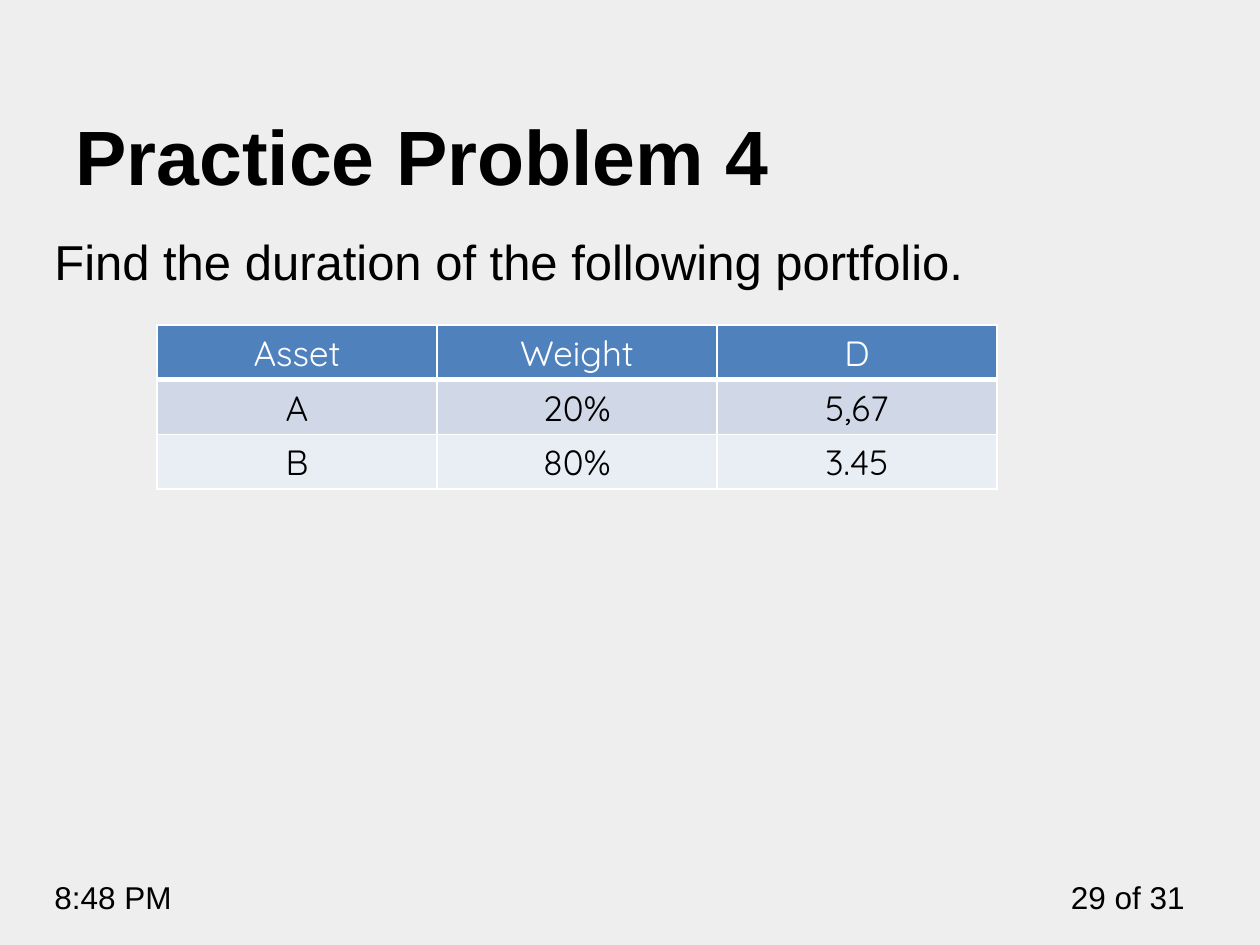
from lxml import etree
from pptx import Presentation
from pptx.dml.color import RGBColor
from pptx.enum.text import MSO_ANCHOR, PP_ALIGN
from pptx.oxml.ns import qn
from pptx.util import Emu, Pt

EMU_PER_PX = 914400 / 126
COLORS = {
    "background": "EEEEEE",
    "text": "000000",
    "white": "FFFFFF",
    "header": "4F81BD",
    "odd_row": "D0D8E8",
    "even_row": "E9EDF4",
}


def px(length):
    return Emu(round(length * EMU_PER_PX))


def write_text(frame, text, size, font="Arial", color="text", bold=False,
               align=PP_ALIGN.LEFT, anchor=MSO_ANCHOR.TOP):
    frame.word_wrap = True
    frame.vertical_anchor = anchor
    paragraph = frame.paragraphs[0]
    paragraph.alignment = align
    run = paragraph.add_run()
    run.text = text
    run.font.name = font
    run.font.size = Pt(size)
    run.font.bold = bold
    run.font.color.rgb = RGBColor.from_string(COLORS[color])


presentation = Presentation()
presentation.slide_width = px(1260)
presentation.slide_height = px(945)
slide = presentation.slides.add_slide(presentation.slide_layouts[6])
slide.background.fill.solid()
slide.background.fill.fore_color.rgb = RGBColor.from_string(COLORS["background"])

# Footer, body and title
page_number = slide.shapes.add_textbox(px(1050), px(872), px(147), px(50))
write_text(page_number.text_frame, "29 of 31", 18, align=PP_ALIGN.RIGHT)

clock = slide.shapes.add_textbox(px(42), px(872), px(199), px(50))
write_text(clock.text_frame, "8:48 PM", 18)

body = slide.shapes.add_textbox(px(42), px(220), px(1166), px(640))
body.text_frame.margin_top = px(12)
write_text(body.text_frame, "Find the duration of the following portfolio.", 28)

title = slide.shapes.add_textbox(px(63), px(49), px(1134), px(158))
write_text(title.text_frame, "Practice Problem 4", 44, bold=True,
           anchor=MSO_ANCHOR.BOTTOM)

# Portfolio table
portfolio = [
    ("Asset", "Weight", "D"),
    ("A", "20%", "5,67"),
    ("B", "80%", "3.45"),
]
row_fills = ["header", "odd_row", "even_row"]
table = slide.shapes.add_table(3, 3, px(157), px(325), px(840), px(156)).table

for row_index, (values, fill) in enumerate(zip(portfolio, row_fills)):
    for column_index, value in enumerate(values):
        cell = table.cell(row_index, column_index)
        is_header = row_index == 0
        write_text(cell.text_frame, value, 20, font="Quicksand",
                   color="white" if is_header else "text",
                   align=PP_ALIGN.CENTER)
        properties = cell._tc.get_or_add_tcPr()
        for side in ("lnL", "lnR", "lnT", "lnB"):
            below_header = (row_index, side) in ((0, "lnB"), (1, "lnT"))
            border = etree.SubElement(properties, qn(f"a:{side}"),
                                      w=str(Pt(3 if below_header else 1)))
            line_fill = etree.SubElement(border, qn("a:solidFill"))
            etree.SubElement(line_fill, qn("a:srgbClr"), val=COLORS["white"])
        cell.fill.solid()
        cell.fill.fore_color.rgb = RGBColor.from_string(COLORS[fill])

presentation.save("out.pptx")
